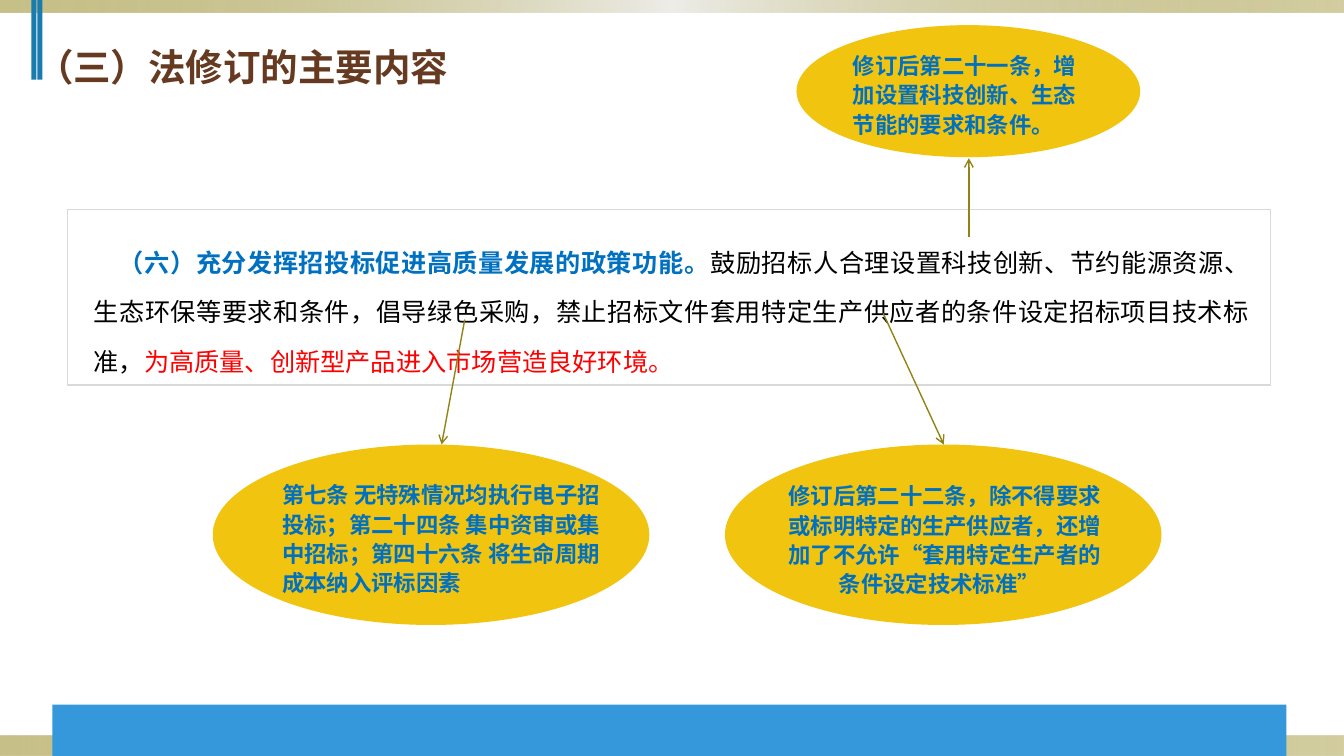
from dataclasses import dataclass
from typing import Optional

from lxml import etree
from pptx import Presentation
from pptx import util as u
from pptx.dml.color import RGBColor
from pptx.enum import shapes, text
from pptx.oxml import ns

WIDTH, HEIGHT = u.Inches(13.33), u.Inches(7.5)

OLIVE = RGBColor(0x91, 0x84, 0x15)
PALE = RGBColor(0xEE, 0xED, 0xE8)
TEAL = RGBColor(0x1A, 0x7B, 0xAE)
SKY = RGBColor(0x34, 0x98, 0xDB)
GOLD = RGBColor(0xF1, 0xC4, 0x0F)
WHITE = RGBColor(0xFF, 0xFF, 0xFF)
GREY = RGBColor(0xD9, 0xD9, 0xD9)
BROWN = RGBColor(0x65, 0x3A, 0x20)
BLUE = RGBColor(0x00, 0x70, 0xC0)
BLACK = RGBColor(0x00, 0x00, 0x00)
RED = RGBColor(0xFF, 0x00, 0x00)

CJK_FONT, CALLOUT_FONT = "Noto Sans CJK SC", "Roboto"
RECT, OVAL = shapes.MSO_SHAPE.RECTANGLE, shapes.MSO_SHAPE.OVAL


@dataclass(frozen=True)
class Area:
    """A box in percent of the slide's width and height."""
    left: float
    top: float
    width: float
    height: float

    def emu(self) -> tuple:
        return across(self.left), down(self.top), across(self.width), down(self.height)


@dataclass(frozen=True)
class Phrase:
    wording: str
    color: RGBColor = BLUE
    bold: bool = True


@dataclass(frozen=True)
class Paragraph:
    phrases: tuple
    left: float = 0
    first_line: float = 0
    leading: Optional[float] = None
    before: float = 0
    align: text.PP_ALIGN = text.PP_ALIGN.LEFT


@dataclass(frozen=True)
class Callout:
    """An oval, its wording, and an arrow that ends on the oval."""
    oval: Area
    label: Area
    paragraphs: tuple
    start: tuple
    end: tuple


def across(percent: float) -> int:
    return int(WIDTH * percent / 100)


def down(percent: float) -> int:
    return int(HEIGHT * percent / 100)


def callout_line(wording: str, left: float = 0) -> Paragraph:
    return Paragraph((Phrase(wording),), left=left, leading=21)


CALLOUTS = (
    Callout(Area(53.94, 58.8, 32.48, 23.87), Area(57.84, 62.8, 26.18, 17.2),
            (callout_line("修订后第二十二条，除不得要求或标明特定的生产供应者，还增加了不允许“套用特定生产者的"),
             callout_line("条件设定技术标准”", left=0.5)),
            (65.72, 41.47), (70.22, 58.8)),
    Callout(Area(59.26, 3.33, 25.58, 17.47), Area(62.64, 5.87, 18.98, 13.2),
            (callout_line("修订后第二十一条，增加设置科技创新、生态节能的要求和条件。"),),
            (72.09, 31.33), (72.09, 20.93)),
    Callout(Area(15.83, 58.8, 32.48, 23.87), Area(20.18, 62.67, 25.51, 17.2),
            (callout_line("第七条 无特殊情况均执行电子招投标；第二十四条 集中资审或集中招标；"
                          "第四十六条 将生命周期成本纳入评标因素"),),
            (34.58, 42.27), (32.86, 58.8)),
)

TITLE = Paragraph((Phrase("（三）法修订的主要内容", BROWN),), left=0.08)
POLICY = Paragraph(
    (Phrase("（六）充分发挥招投标促进高质量发展的政策功能。"),
     Phrase("鼓励招标人合理设置科技创新、节约能源资源、生态环保等要求和条件，倡导绿色采购，"
            "禁止招标文件套用特定生产供应者的条件设定招标项目技术标准，", BLACK, False),
     Phrase("为高质量、创新型产品进入市场营造良好环境。", RED, False)),
    left=0.06, first_line=0.25, leading=35.4, before=11.2, align=text.PP_ALIGN.JUSTIFY)


def add_block(slide, area: Area, fill: RGBColor, preset=RECT, line: Optional[RGBColor] = None):
    block = slide.shapes.add_shape(preset, *area.emu())
    block.shadow.inherit = False
    block.fill.solid()
    block.fill.fore_color.rgb = fill
    if line is None:
        block.line.fill.background()
    else:
        block.line.color.rgb = line
        block.line.width = u.Pt(1)
    return block


def add_edge_band(slide, area: Area) -> None:
    """A band that fades from translucent olive to pale and back."""
    band = add_block(slide, area, PALE)
    band.fill.gradient()
    band.fill.gradient_angle = 0
    stops = band._element.spPr.find(".//" + ns.qn("a:gsLst"))
    for stop in list(stops):
        stops.remove(stop)
    for position, color, opacity in ((0, OLIVE, 50), (50, PALE, 100), (100, OLIVE, 40)):
        stop = etree.SubElement(stops, ns.qn("a:gs"), pos=str(position * 1000))
        tint = etree.SubElement(stop, ns.qn("a:srgbClr"), val=str(color))
        etree.SubElement(tint, ns.qn("a:alpha"), val=str(opacity * 1000))


def add_wording(slide, area: Area, paragraphs: tuple, size: float, font: str,
                inset: float, anchor=text.MSO_ANCHOR.TOP) -> None:
    frame = slide.shapes.add_textbox(*area.emu()).text_frame
    frame.word_wrap = True
    frame.vertical_anchor = anchor
    frame.margin_left = frame.margin_right = u.Inches(inset)
    frame.margin_top = frame.margin_bottom = u.Inches(0.05)
    for index, content in enumerate(paragraphs):
        line = frame.add_paragraph() if index else frame.paragraphs[0]
        line.alignment = content.align
        line.space_before = u.Pt(content.before)
        if content.leading:
            line.line_spacing = u.Pt(content.leading)
        indents = line._p.get_or_add_pPr()
        indents.set("marL", str(u.Inches(content.left)))
        indents.set("indent", str(u.Inches(content.first_line)))
        for phrase in content.phrases:
            run = line.add_run()
            run.text = phrase.wording
            run.font.size = u.Pt(size)
            run.font.bold = phrase.bold
            run.font.color.rgb = phrase.color
            run.font.name = font
            etree.SubElement(run._r.get_or_add_rPr(), ns.qn("a:ea"), typeface=CJK_FONT)


def add_arrow(slide, start: tuple, end: tuple) -> None:
    arrow = slide.shapes.add_connector(
        shapes.MSO_CONNECTOR.STRAIGHT,
        across(start[0]), down(start[1]), across(end[0]), down(end[1]))
    arrow.line.color.rgb = OLIVE
    arrow.line.width = u.Pt(1)
    etree.SubElement(arrow.line._get_or_add_ln(), ns.qn("a:tailEnd"), type="arrow")
    etree.SubElement(arrow._element.spPr, ns.qn("a:effectLst"))


def add_callout(slide, callout: Callout) -> None:
    add_block(slide, callout.oval, GOLD, OVAL)
    add_wording(slide, callout.label, callout.paragraphs, 16, CALLOUT_FONT, 0.11)
    add_arrow(slide, callout.start, callout.end)


def main() -> None:
    deck = Presentation()
    deck.slide_width, deck.slide_height = WIDTH, HEIGHT
    slide = deck.slides.add_slide(deck.slide_layouts[6])

    add_edge_band(slide, Area(0, 97.33, 100, 2.67))
    add_edge_band(slide, Area(0, 0, 100, 1.6))
    for left in (2.33, 2.78):
        add_block(slide, Area(left, 0, 0.38, 10.53), TEAL)
    add_wording(slide, Area(1.35, 5.73, 56.71, 6.13), (TITLE,), 26.8, CJK_FONT, 0.1,
                text.MSO_ANCHOR.MIDDLE)

    add_block(slide, Area(3.9, 93.2, 91.82, 6.8), SKY)
    add_block(slide, Area(5.03, 27.73, 89.5, 23.2), WHITE, line=GREY)
    add_wording(slide, Area(5.85, 29.47, 87.85, 20.93), (POLICY,), 18, CJK_FONT, 0.09)
    for callout in CALLOUTS:
        add_callout(slide, callout)

    deck.save("out.pptx")


if __name__ == "__main__":
    main()
